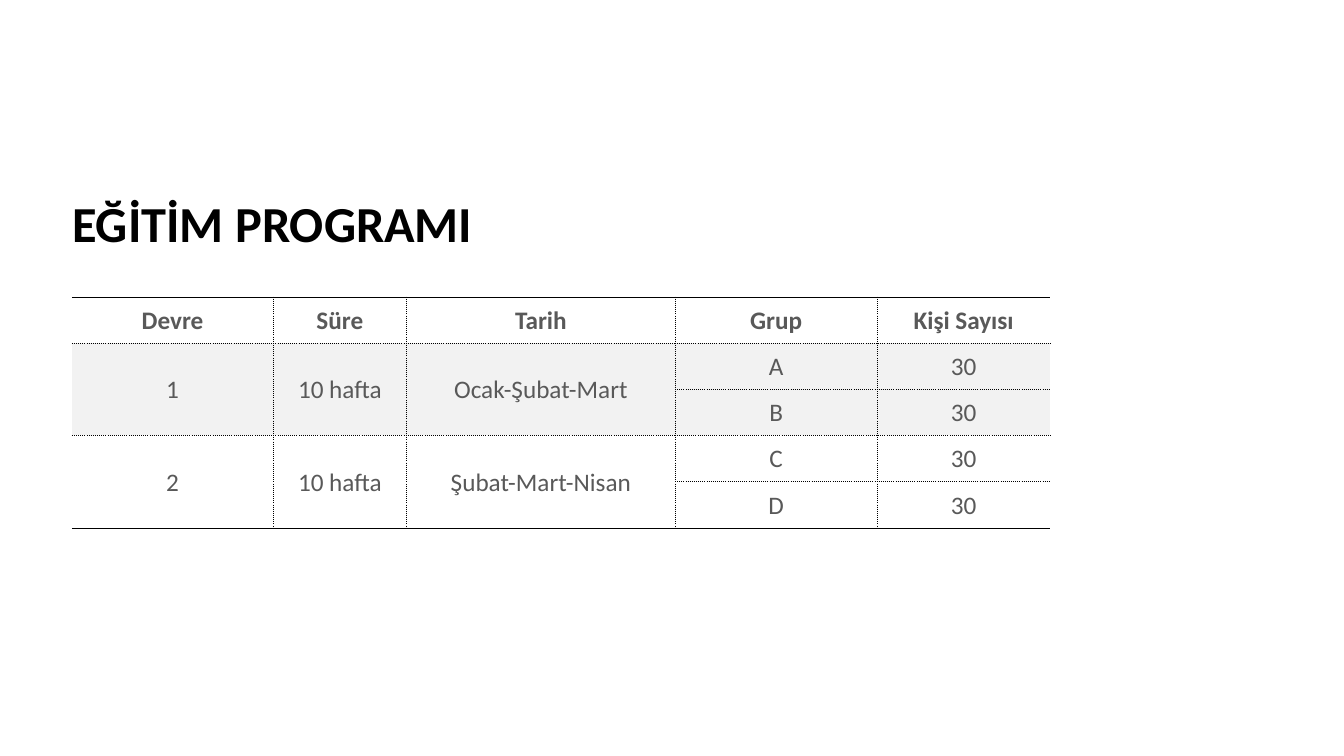
from dataclasses import dataclass

from lxml import etree
from pptx import Presentation
from pptx.dml.color import RGBColor
from pptx.enum.text import MSO_ANCHOR, PP_ALIGN
from pptx.oxml.ns import qn
from pptx.util import Cm, Pt

MIDDLE = MSO_ANCHOR.MIDDLE
CENTER = PP_ALIGN.CENTER


@dataclass(frozen=True)
class Theme:
    """Hold the font, colours and sizes of the slide."""
    font: str = "Calibri"
    ink: str = "000000"
    text: str = "595959"
    band: str = "F2F2F2"
    title: int = 36
    body: int = 18
    edge: float = 1
    inner: float = 0.5


THEME = Theme()
WIDTHS = (5.08, 3.35, 6.78, 5.08, 4.37)
HEIGHTS = (1.16, 1.16, 1.16, 1.16, 1.18)
HEAD = ("Devre", "Süre", "Tarih", "Grup", "Kişi Sayısı")
TERMS = (
    (("1", "10 hafta", "Ocak-Şubat-Mart"), (("A", "30"), ("B", "30"))),
    (("2", "10 hafta", "Şubat-Mart-Nisan"), (("C", "30"), ("D", "30"))),
)


def add_run(para, text, size, color, bold=False):
    """Add one styled run to a paragraph."""
    run = para.add_run()
    run.text = text
    font = run.font
    font.name, font.size, font.bold = THEME.font, Pt(size), bold
    font.color.rgb = RGBColor.from_string(color)


def add_title(slide, left, top, width, height):
    """Place the title in the given box."""
    frame = slide.shapes.add_textbox(
        Cm(left), Cm(top), Cm(width), Cm(height)).text_frame
    frame.word_wrap = True
    frame.vertical_anchor = MIDDLE
    para = frame.paragraphs[0]
    para.line_spacing = 0.9
    add_run(para, "EĞİTİM PROGRAMI", THEME.title, THEME.ink, True)


def add_line(cell, side, width, dash):
    """Draw one side of a cell, or clear it when the width is zero."""
    line = etree.SubElement(cell._tc.get_or_add_tcPr(), qn(f"a:ln{side}"))
    if not width:
        etree.SubElement(line, qn("a:noFill"))
        return
    line.set("w", str(Pt(width)))
    fill = etree.SubElement(line, qn("a:solidFill"))
    etree.SubElement(fill, qn("a:srgbClr"), val=THEME.ink)
    etree.SubElement(line, qn("a:prstDash"), val=dash)


def style_cell(cell, row, col):
    """Set borders, fill and insets from the place of a cell."""
    end = row + (cell.span_height if cell.is_merge_origin else 1)
    outer, inner = (THEME.edge, "solid"), (THEME.inner, "dot")
    none = (0, "")
    add_line(cell, "L", *(inner if col else none))
    add_line(cell, "R", *(inner if col < len(WIDTHS) - 1 else none))
    above = inner if row else outer
    add_line(cell, "T", *(none if cell.is_spanned else above))
    add_line(cell, "B", *(outer if end == len(HEIGHTS) else inner))
    if row in (1, 2):
        cell.fill.solid()
        cell.fill.fore_color.rgb = RGBColor.from_string(THEME.band)
    else:
        cell.fill.background()
    cell.margin_left = cell.margin_right = cell.margin_top = Cm(0.03)
    cell.margin_bottom = 0
    cell.vertical_anchor = MIDDLE


def write_cell(cell, text, bold=False):
    """Write centred text into a cell."""
    para = cell.text_frame.paragraphs[0]
    para.alignment = CENTER
    add_run(para, text, THEME.body, THEME.text, bold)


def add_plan(slide, left, top):
    """Place the course table with its corner at the given point."""
    table = slide.shapes.add_table(
        len(HEIGHTS), len(WIDTHS), Cm(left), Cm(top),
        Cm(sum(WIDTHS)), Cm(sum(HEIGHTS))).table
    table.first_row = table.horz_banding = False
    for part, width in zip(table.columns, WIDTHS):
        part.width = Cm(width)
    for part, height in zip(table.rows, HEIGHTS):
        part.height = Cm(height)
    for col, text in enumerate(HEAD):
        write_cell(table.cell(0, col), text, True)
    row = 1
    for facts, groups in TERMS:
        for col, text in enumerate(facts):
            cell = table.cell(row, col)
            cell.merge(table.cell(row + len(groups) - 1, col))
            write_cell(cell, text)
        for group in groups:
            for col, text in enumerate(group, len(facts)):
                write_cell(table.cell(row, col), text)
            row += 1
    for row in range(len(HEIGHTS)):
        for col in range(len(WIDTHS)):
            style_cell(table.cell(row, col), row, col)


def main():
    """Build and save the slide."""
    deck = Presentation()
    deck.slide_width, deck.slide_height = Cm(33.87), Cm(19.05)
    slide = deck.slides.add_slide(deck.slide_layouts[6])
    add_title(slide, 1.57, 4.65, 31.8, 2.11)
    add_plan(slide, 1.81, 7.49)
    deck.save("out.pptx")


if __name__ == "__main__":
    main()
